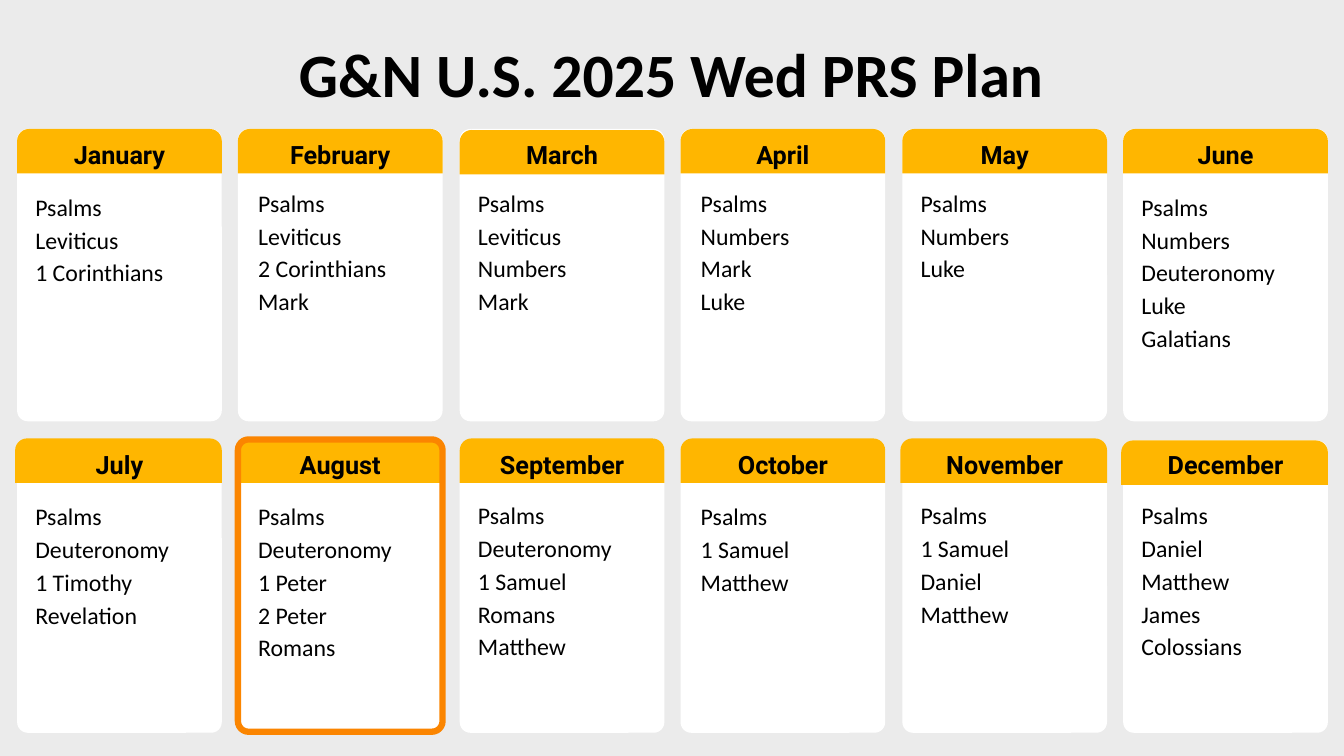
import dataclasses

import pptx
import pptx.dml.color
import pptx.enum.shapes
import pptx.enum.text
import pptx.presentation
import pptx.shapes.autoshape
import pptx.slide
import pptx.text.text
import pptx.util

RGBColor = pptx.dml.color.RGBColor
Shape = pptx.enum.shapes.MSO_SHAPE
Align = pptx.enum.text.PP_ALIGN

GREY = RGBColor(0xEB, 0xEB, 0xEB)
WHITE = RGBColor(0xFF, 0xFF, 0xFF)
YELLOW = RGBColor(0xFF, 0xB6, 0x00)
ORANGE = RGBColor(0xFB, 0x85, 0x00)
BLACK = RGBColor(0x00, 0x00, 0x00)

EMU_PER_PX = 9144  # 100 px to the inch
COLUMNS = 6
CARD_LEFT, CARD_STEP = 17, 219.4
CARD_WIDTH, CARD_HEIGHT = 203, 290
CARD_TOPS = (128, 437)
BAND_TOPS = (128, 435)
BAND_HEIGHT = 44
NAME_TOPS = (138, 446)
BOOK_TOPS = (187, 498)
BOOK_STEP = 33
CORNER = 0.052
HIGHLIGHTED = "August"


@dataclasses.dataclass(frozen=True)
class Month:
    name: str
    books: tuple[str, ...]
    band_overhang: int = 0
    band_drop: int = 0
    books_shift: int = 0
    books_drop: int = 0


@dataclasses.dataclass(frozen=True)
class Area:
    left: int
    top: int
    width: int
    height: int

    def emu(self) -> tuple[int, ...]:
        return tuple(length * EMU_PER_PX for length in dataclasses.astuple(self))


MONTHS = (
    Month("January", ("Psalms", "Leviticus", "1 Corinthians"), books_shift=-2, books_drop=4),
    Month("February", ("Psalms", "Leviticus", "2 Corinthians", "Mark")),
    Month("March", ("Psalms", "Leviticus", "Numbers", "Mark"), band_drop=1, books_shift=-2),
    Month("April", ("Psalms", "Numbers", "Mark", "Luke")),
    Month("May", ("Psalms", "Numbers", "Luke"), books_shift=-2),
    Month("June", ("Psalms", "Numbers", "Deuteronomy", "Luke", "Galatians"),
          books_shift=-2, books_drop=4),
    Month("July", ("Psalms", "Deuteronomy", "1 Timothy", "Revelation"),
          band_overhang=2, books_shift=-2),
    Month("August", ("Psalms", "Deuteronomy", "1 Peter", "2 Peter", "Romans")),
    Month("September", ("Psalms", "Deuteronomy", "1 Samuel", "Romans", "Matthew"),
          books_shift=-2, books_drop=-1),
    Month("October", ("Psalms", "1 Samuel", "Matthew")),
    Month("November", ("Psalms", "1 Samuel", "Daniel", "Matthew"),
          band_overhang=2, books_shift=-2, books_drop=-1),
    Month("December", ("Psalms", "Daniel", "Matthew", "James", "Colossians"),
          band_overhang=2, band_drop=2, books_shift=-2, books_drop=-1),
)


def card_area(index: int) -> Area:
    row, column = divmod(index, COLUMNS)
    left = round(CARD_LEFT + column * CARD_STEP)
    return Area(left, CARD_TOPS[row], CARD_WIDTH, CARD_HEIGHT)


def add_plain_shape(page: pptx.slide.Slide, kind: Shape, area: Area,
                    corners: tuple[float, ...],
                    fill: RGBColor | None) -> pptx.shapes.autoshape.Shape:
    shape = page.shapes.add_shape(kind, *area.emu())
    shape.shadow.inherit = False
    for number, corner in enumerate(corners):
        shape.adjustments[number] = corner
    if fill is None:
        shape.fill.background()
    else:
        shape.fill.solid()
        shape.fill.fore_color.rgb = fill
    shape.line.fill.background()
    return shape


def fill_frame(frame: pptx.text.text.TextFrame, lines: tuple[str, ...], size: int,
               font: str, bold: bool, align: Align, indent: int = 0,
               space_after: int = 0) -> None:
    frame.word_wrap = True
    frame.vertical_anchor = pptx.enum.text.MSO_ANCHOR.TOP
    frame.margin_left = indent * EMU_PER_PX
    frame.margin_top = frame.margin_right = frame.margin_bottom = 0
    for number, line in enumerate(lines):
        para = frame.add_paragraph() if number else frame.paragraphs[0]
        para.alignment = align
        para.space_after = pptx.util.Pt(space_after)
        span = para.add_run()
        span.text = line
        span.font.size = pptx.util.Pt(size)
        span.font.name = font
        span.font.bold = bold
        span.font.color.rgb = BLACK


def add_title(page: pptx.slide.Slide) -> None:
    title = page.shapes.title
    title.left, title.top, title.width, title.height = Area(25, 36, 1282, 74).emu()
    fill_frame(title.text_frame, ("G&N U.S. 2025 Wed PRS Plan",), 44, "Calibri",
               True, Align.CENTER)
    title.text_frame.auto_size = pptx.enum.text.MSO_AUTO_SIZE.NONE


def add_month(page: pptx.slide.Slide, index: int, month: Month) -> None:
    card = card_area(index)
    row = index // COLUMNS
    add_plain_shape(page, Shape.ROUNDED_RECTANGLE, card, (CORNER,), WHITE)

    band = Area(card.left - month.band_overhang, BAND_TOPS[row] + month.band_drop,
                card.width + month.band_overhang, BAND_HEIGHT)
    add_plain_shape(page, Shape.ROUND_2_SAME_RECTANGLE, band, (0.267, 0), YELLOW)

    name_area = Area(card.left, NAME_TOPS[row], card.width, 30)
    name_box = page.shapes.add_textbox(*name_area.emu())
    fill_frame(name_box.text_frame, (month.name,), 18, "Roboto", True, Align.CENTER)

    books_area = Area(card.left + month.books_shift, BOOK_TOPS[row] + month.books_drop,
                      202, BOOK_STEP * len(month.books) - 5)
    books_box = page.shapes.add_textbox(*books_area.emu())
    fill_frame(books_box.text_frame, month.books, 17, "Calibri", False, Align.LEFT,
               indent=20, space_after=3)

    if month.name == HIGHLIGHTED:
        outline_area = dataclasses.replace(card, top=card.top - 1)
        outline = add_plain_shape(page, Shape.ROUNDED_RECTANGLE, outline_area, (CORNER,), None)
        outline.line.color.rgb = ORANGE
        outline.line.width = pptx.util.Pt(4.5)


def main() -> None:
    deck = pptx.Presentation()
    deck.slide_width = pptx.util.Inches(13.33)
    deck.slide_height = pptx.util.Inches(7.5)
    page = deck.slides.add_slide(deck.slide_layouts.get_by_name("Title Only"))
    page.background.fill.solid()
    page.background.fill.fore_color.rgb = GREY
    add_title(page)
    for index, month in enumerate(MONTHS):
        add_month(page, index, month)
    deck.save("out.pptx")


if __name__ == "__main__":
    main()
